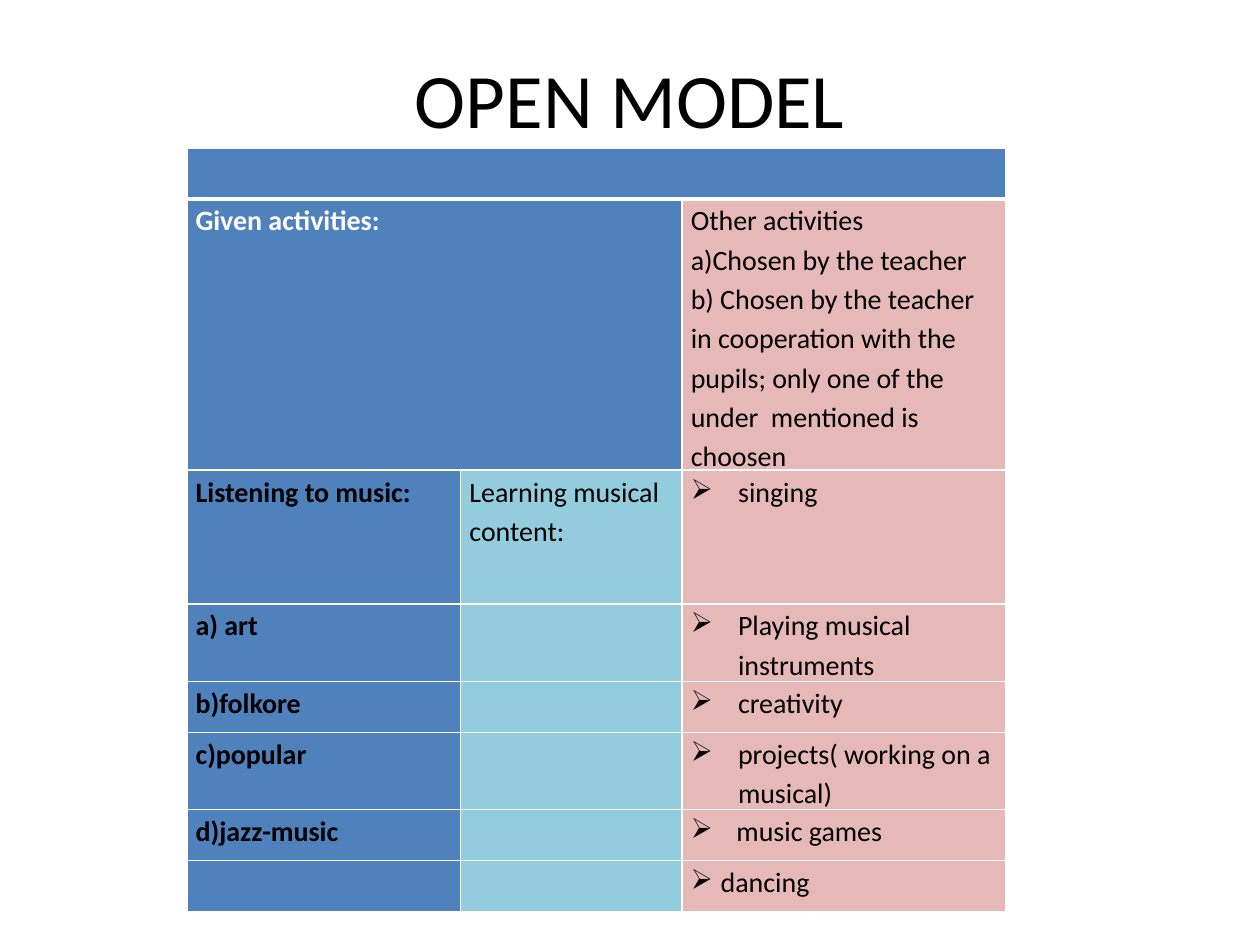
"""Build the OPEN MODEL slide with its table of music activities."""
from lxml import etree
from pptx import Presentation
from pptx.dml.color import RGBColor
from pptx.enum.text import MSO_ANCHOR, PP_ALIGN
from pptx.oxml.ns import qn
from pptx.util import Pt

MIDDLE = MSO_ANCHOR.MIDDLE
CENTER = PP_ALIGN.CENTER
FONT = "Calibri"
BLANK_LAYOUT = 6
COLORS = {"blue": "4F81BD", "aqua": "93CDDD", "pink": "E6B9B8",
          "white": "FFFFFF", "black": "000000"}
COLUMN_FILLS = ["blue", "aqua", "pink"]
COLUMN_WIDTHS = [156.5, 126.5, 185]
ROW_HEIGHTS = [29.2, 155, 76.5, 29.2, 29.2, 31, 29.2, 29.2]
BULLET_INDENTS = {2: 27, 3: 27, 4: 27, 5: 27, 6: 22.5, 7: 13.5}
ROWS = [
    ["", "", ""],
    ["Given activities:", "",
     "Other activities\na)Chosen by the teacher\nb) Chosen by the teacher in cooperation "
     "with the pupils; only one of the under  mentioned is choosen"],
    ["Listening to music:", "Learning musical content:", "singing"],
    ["a) art", "", "Playing musical instruments"],
    ["b)folkore", "", "creativity"],
    ["c)popular", "", "projects( working on a musical)"],
    ["d)jazz-music", "", " music games"],
    ["", "", " dancing"],
]


def add_text(paragraph, text, size, color, bold=False):
    run = paragraph.add_run()
    run.text = text
    run.font.name = FONT
    run.font.size = Pt(size)
    run.font.bold = bold
    run.font.color.rgb = RGBColor.from_string(COLORS[color])


def add_border(cell, position, side, width):
    line = etree.Element(qn(f"a:ln{side}"), w=str(Pt(width)))
    fill = etree.SubElement(line, qn("a:solidFill"))
    etree.SubElement(fill, qn("a:srgbClr"), val=COLORS["white"])
    cell._tc.get_or_add_tcPr().insert(position, line)


presentation = Presentation()
presentation.slide_width = Pt(720)
presentation.slide_height = Pt(540)
slide = presentation.slides.add_slide(presentation.slide_layouts[BLANK_LAYOUT])

title = slide.shapes.add_textbox(Pt(36), Pt(21.6), Pt(648), Pt(68.4))
title.text_frame.word_wrap = True
title.text_frame.vertical_anchor = MIDDLE
title_paragraph = title.text_frame.paragraphs[0]
title_paragraph.alignment = CENTER
add_text(title_paragraph, "OPEN MODEL", 44, "black")

table = slide.shapes.add_table(
    len(ROWS), len(COLUMN_WIDTHS), Pt(106.8), Pt(84.5),
    Pt(sum(COLUMN_WIDTHS)), Pt(sum(ROW_HEIGHTS))).table
for column, width in zip(table.columns, COLUMN_WIDTHS):
    column.width = Pt(width)
for row, height in zip(table.rows, ROW_HEIGHTS):
    row.height = Pt(height)
table.cell(0, 0).merge(table.cell(0, 2))
table.cell(1, 0).merge(table.cell(1, 1))

for row_index, texts in enumerate(ROWS):
    for column_index, text in enumerate(texts):
        cell = table.cell(row_index, column_index)
        cell.margin_left = cell.margin_right = Pt(5)
        cell.margin_top = cell.margin_bottom = Pt(0)
        fill_name = "blue" if row_index == 0 else COLUMN_FILLS[column_index]
        cell.fill.solid()
        cell.fill.fore_color.rgb = RGBColor.from_string(COLORS[fill_name])
        widths = {"L": 1, "R": 1, "T": 3 if row_index == 1 else 1,
                  "B": 3 if row_index == 0 else 1}
        for position, (side, width) in enumerate(widths.items()):
            add_border(cell, position, side, width)
        if not text:
            continue
        for line_index, line_text in enumerate(text.split("\n")):
            frame = cell.text_frame
            paragraph = frame.add_paragraph() if line_index else frame.paragraphs[0]
            paragraph.line_spacing = 1.15
            if column_index == 2 and row_index in BULLET_INDENTS:
                indent = Pt(BULLET_INDENTS[row_index])
                properties = paragraph._p.get_or_add_pPr()
                properties.set("marL", str(indent))
                properties.set("indent", str(-indent))
                etree.SubElement(properties, qn("a:buChar"), char="➢")
            color = "white" if row_index == 1 and column_index == 0 else "black"
            add_text(paragraph, line_text, 16, color, column_index == 0)

presentation.save("out.pptx")
